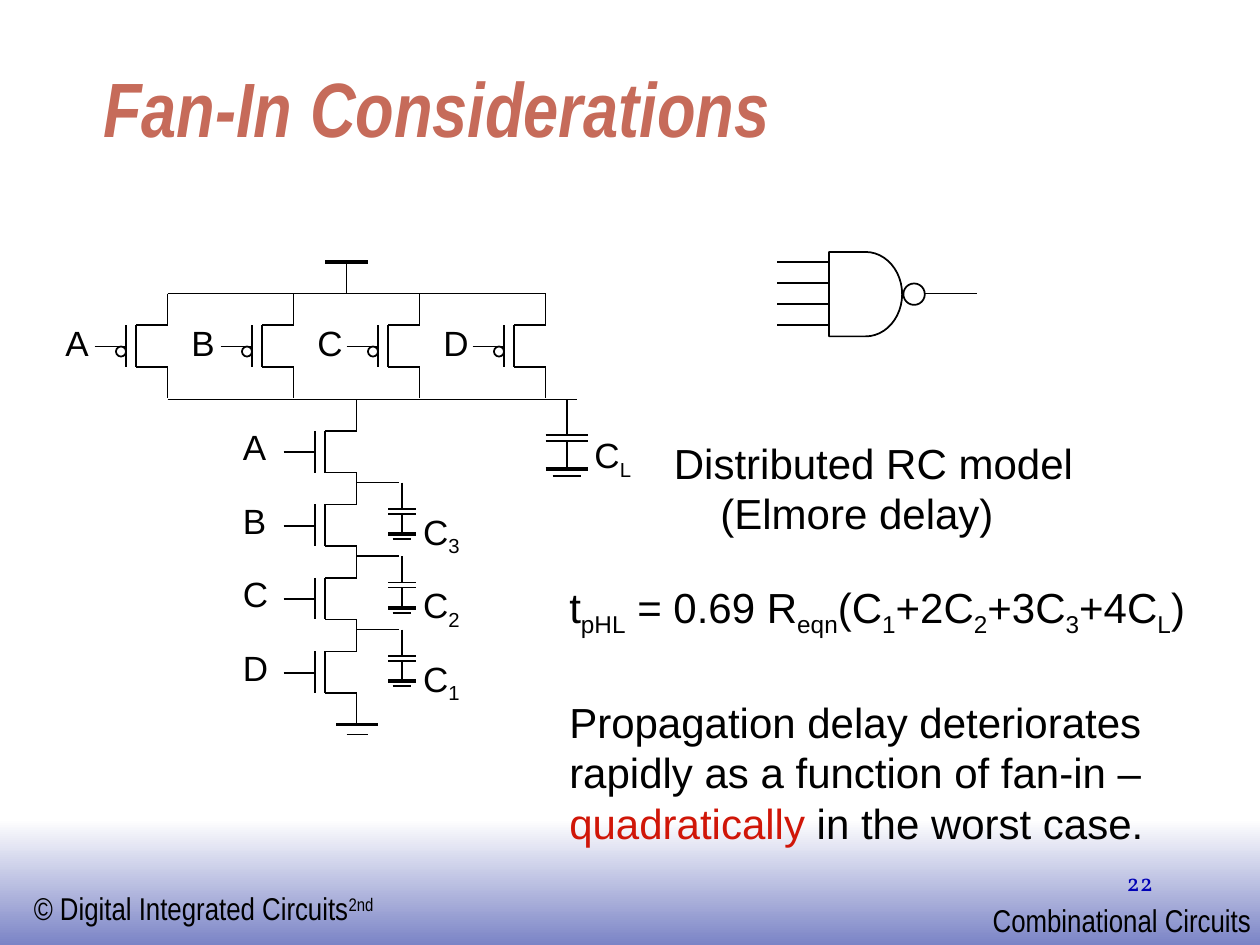
from lxml import etree
from pptx import Presentation
from pptx.dml.color import RGBColor
from pptx.enum import shapes, text
from pptx.oxml.ns import qn
from pptx.util import Inches, Pt

BLACK = "000000"

prs = Presentation()
prs.slide_width, prs.slide_height = Inches(10), Inches(7.5)
slide = prs.slides.add_slide(prs.slide_layouts[5])


def write(frame, paragraphs, size=20, font="Arial", colour=BLACK, wrap=False,
          bold=False, italic=False, align=text.PP_ALIGN.LEFT,
          anchor=text.MSO_ANCHOR.TOP):
    """Fill a frame; a run is (text, baseline percent[, colour])."""
    frame.word_wrap, frame.vertical_anchor = wrap, anchor
    frame.auto_size = text.MSO_AUTO_SIZE.NONE
    for i, runs in enumerate(paragraphs):
        p = frame.add_paragraph() if i else frame.paragraphs[0]
        p.alignment = align
        for words, baseline, *own in runs:
            run = p.add_run()
            run.text = words
            run.font.size, run.font.name = Pt(size), font
            run.font.bold, run.font.italic = bold, italic
            run.font.color.rgb = RGBColor.from_string(own[0] if own else colour)
            if baseline:
                run.font._element.set("baseline", str(baseline * 1000))


def line(x1, y1, x2, y2, width=1):
    wire = slide.shapes.add_connector(
        shapes.MSO_CONNECTOR.STRAIGHT,
        Inches(x1), Inches(y1), Inches(x2), Inches(y2))
    wire.line.width = Pt(width)
    wire.line.color.rgb = RGBColor.from_string(BLACK)
    etree.SubElement(wire._element.spPr, qn("a:effectLst"))


# Footer band, fading from white at the top
band = slide.shapes.add_shape(shapes.MSO_SHAPE.RECTANGLE, 0, Inches(6.5),
                              Inches(10), Inches(1))
band.shadow.inherit = False
band.line.fill.background()
band.fill.gradient()
band.fill.gradient_angle = 270
for stop, (position, shade) in zip(band.fill.gradient_stops,
                                   [(0, "FFFFFF"), (1, "7B84C6")]):
    stop.position = position
    stop.color.rgb = RGBColor.from_string(shade)

# Title
title = slide.shapes.title
title.left, title.top = Inches(0.72), Inches(0.48)
title.width, title.height = Inches(8.5), Inches(0.78)
write(title.text_frame, [[("Fan-In Considerations", 0)]], size=44,
      font="Arial Narrow", colour="C66B5A", wrap=True, bold=True, italic=True,
      anchor=text.MSO_ANCHOR.BOTTOM)

# Footer texts and circuit labels
narrow = {"size": 18, "font": "Arial Narrow"}
number = {"size": 14, "font": "Vollkorn", "colour": "0000B6", "wrap": True,
          "align": text.PP_ALIGN.RIGHT}
labels = [
    (0.17, 7.01, 2.93, [("© Digital Integrated Circuits", 0), ("2nd", 30)], narrow),
    (7.78, 7.1, 2.25, [("Combinational Circuits", 0)], narrow),
    (7.17, 6.83, 2.08, [("22", 0)], number),
    (4.62, 3.39, 0.5, [("C", 0), ("L", -25)], {}),
]
for i, name in enumerate("ABCD"):
    labels.append((0.42 + i, 2.5, 0.4, [(name, 0)], {}))
    labels.append((1.83, 3.33 + i * 7 / 12, 0.4, [(name, 0)], {}))
for i, index in enumerate("321"):
    labels.append((3.26, 4 + i * 7 / 12, 0.5, [("C", 0), (index, -25)], {}))
for x, y, width, runs, style in labels:
    box = slide.shapes.add_textbox(Inches(x), Inches(y), Inches(width), Inches(0.43))
    write(box.text_frame, [runs], **style)

# Transistors: four PMOS in parallel, four NMOS in series
pmos = [(1 + i, 2.58) for i in range(4)]
nmos = [(2.5, 3.42 + i * 7 / 12) for i in range(4)]
for x, y in pmos + nmos:
    line(x - 0.25, y + 0.17, x, y + 0.17)
    line(x, y, x, y + 0.33)
    line(x + 0.08, y, x + 0.08, y + 0.33)
    line(x + 0.08, y, x + 0.33, y)
    line(x + 0.08, y + 0.33, x + 0.33, y + 0.33)
    line(x + 0.33, y + 0.33, x + 0.33, y + 0.58)
for x, y in pmos:
    line(x + 0.33, y - 0.25, x + 0.33, y)

# Supply, rails and ground
line(2.58, 2.08, 2.92, 2.08, width=2.25)
line(2.75, 2.08, 2.75, 2.33)
line(1.33, 2.33, 4.33, 2.33)
line(1.33, 3.17, 4.58, 3.17)
line(2.83, 3.17, 2.83, 3.42)
line(2.67, 5.75, 3, 5.75, width=2.25)
line(2.75, 5.83, 2.92, 5.83)

# Capacitors: x, top, half width, lead, plate gap, stem, gap in ground symbol
capacitors = [(4.5, 3.17, 0.17, 0.28, 0.05, 0.22, 0.06)]
for i in range(3):
    node = 3.83 + i * 7 / 12
    line(2.83, node, 3.17, node)
    capacitors.append((3.19, node, 0.11, 0.21, 0.04, 0.16, 0.04))
for x, top, half, lead, gap, stem, foot in capacitors:
    upper = top + lead
    lower = upper + gap
    ground = lower + stem
    line(x, top, x, upper)
    line(x - half, upper, x + half, upper)
    line(x - half, lower, x + half, lower)
    line(x, lower, x, ground)
    line(x - half, ground, x + half, ground, width=2.25)
    line(x - half * 2 / 3, ground + foot, x + half * 2 / 3, ground + foot)

# NAND gate wires
for i in range(4):
    y = 2.08 + i / 6
    line(6.17, y, 6.58, y)
line(7.33, 2.33, 7.75, 2.33)

# NAND gate body and all inverting bubbles
circle = shapes.MSO_SHAPE.OVAL
outlines = [(shapes.MSO_SHAPE.FLOWCHART_DELAY, 6.58, 2, 0.58, 0.67),
            (circle, 7.17, 2.25, 0.17, 0.17)]
outlines += [(circle, x - 0.08, y + 0.17, 0.08, 0.08) for x, y in pmos]
for kind, *place in outlines:
    outline = slide.shapes.add_shape(kind, *[Inches(v) for v in place])
    outline.shadow.inherit = False
    outline.fill.background()
    outline.line.width = Pt(1)
    outline.line.color.rgb = RGBColor.from_string(BLACK)

# Delay model
model = slide.shapes.add_textbox(Inches(4.42), Inches(3.42), Inches(5.33), Inches(3.3))
write(model.text_frame, [
    [("Distributed RC model", 0)],
    [("(Elmore delay)", 0)],
    [("t", 0), ("pHL", -25), (" = 0.69 R", 0), ("eqn", -25), ("(C", 0), ("1", -25),
     ("+2C", 0), ("2", -25), ("+3C", 0), ("3", -25), ("+4C", 0), ("L", -25), (")", 0)],
    [("Propagation delay deteriorates rapidly as a function of fan-in – ", 0),
     ("quadratically", 0, "D01608"), (" in the worst case.", 0)],
], size=24, wrap=True)
for p, indent, before in zip(model.text_frame.paragraphs,
                             [0.83, 1.2, 0, 0], [0, 0, 28.8, 33]):
    p.line_spacing, p.space_before = Pt(28.8), Pt(before)
    p._p.get_or_add_pPr().set("marL", str(Inches(indent)))

prs.save("out.pptx")
